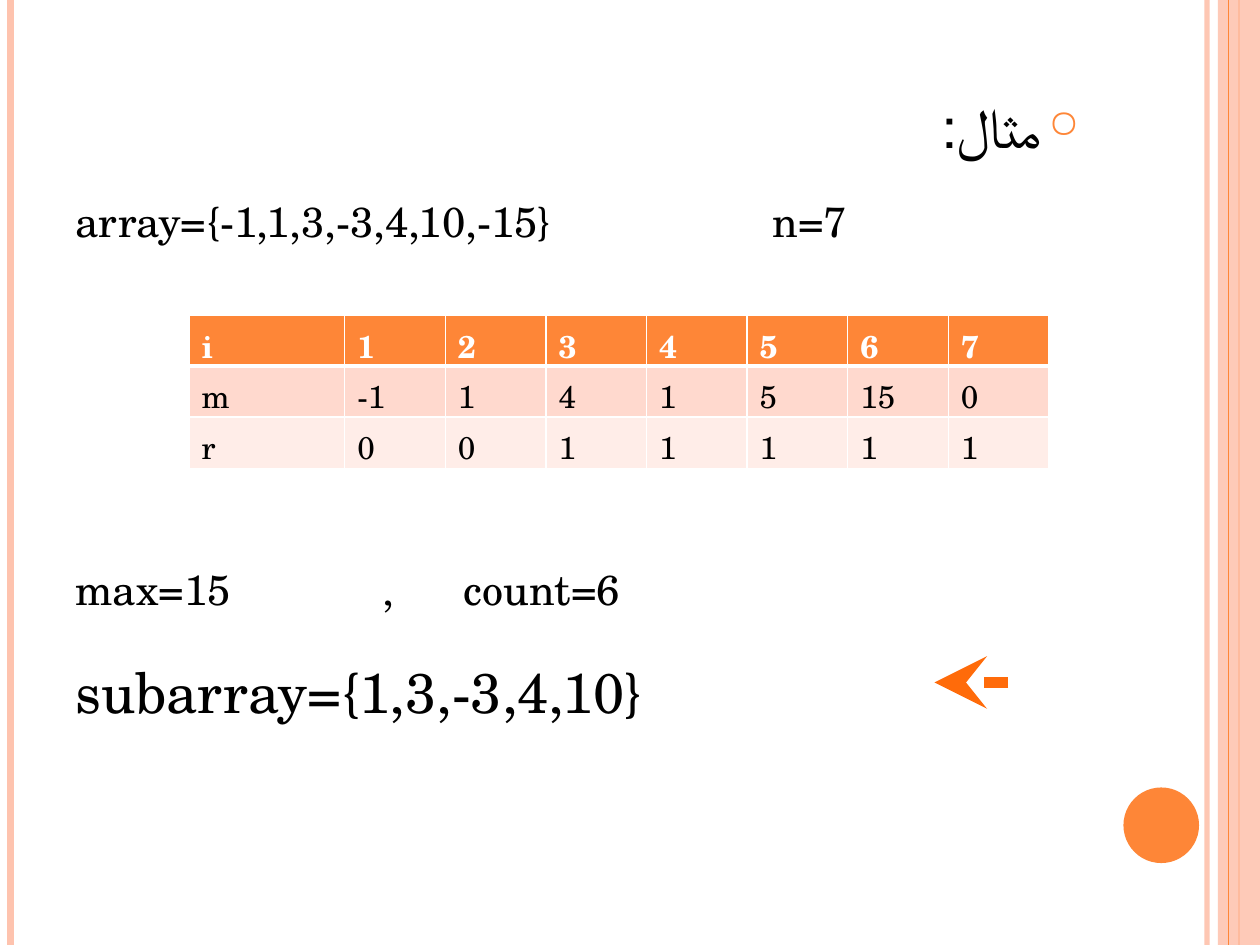
from lxml import etree
from pptx import Presentation, util as u
from pptx.dml.color import RGBColor
from pptx.enum import shapes, text
from pptx.oxml.ns import qn

ORANGE, PEACH, WHITE, BLACK = "FE8637", "FEC3AE", "FFFFFF", "000000"
ALIGN = text.PP_ALIGN


def rgb(code):
    return RGBColor.from_string(code)


def put(obj, vals):
    for key, val in vals.items():
        setattr(obj, key, val)


def node(up, tag, **vals):
    return etree.SubElement(up, qn(tag), {k: str(v) for k, v in vals.items()})


def fade(fill, part):
    """Make a solid fill partly clear; part is its opacity in percent."""
    color = fill._xPr.find(qn("a:solidFill"))[0]
    node(color, "a:alpha", val=part * 1000)


class Deck:
    font = "TeX Gyre Schola"

    def __init__(self, wide, high):
        self.prs = Presentation()
        put(self.prs, {"slide_width": u.Pt(wide), "slide_height": u.Pt(high)})
        self.slide = self.prs.slides.add_slide(self.prs.slide_layouts[6])
        self.items = self.slide.shapes

    def style(self, run, size, color=BLACK, bold=False):
        put(run.font, {"name": self.font, "size": u.Pt(size), "bold": bold})
        run.font.color.rgb = rgb(color)

    def line(self, x1, y1, x2, y2, color, width, alpha=None, head=None):
        ends = [u.Pt(v) for v in (x1, y1, x2, y2)]
        line = self.items.add_connector(shapes.MSO_CONNECTOR.STRAIGHT, *ends)
        line.line.width = u.Pt(width)
        line.line.color.rgb = rgb(color)
        if alpha:
            fade(line.line.fill, alpha)
        if head:
            node(line.line._get_or_add_ln(), "a:tailEnd", type=head, w="lg", len="lg")
        node(line._element.spPr, "a:effectLst")

    def shape(self, kind, box, color, alpha=None):
        item = self.items.add_shape(kind, *[u.Pt(v) for v in box])
        item.shadow.inherit = False
        item.fill.solid()
        item.fill.fore_color.rgb = rgb(color)
        item.line.fill.background()
        if alpha:
            fade(item.fill, alpha)

    def body(self, box, rows):
        frame = self.items.add_textbox(*[u.Pt(v) for v in box]).text_frame
        frame.word_wrap = True
        for num, (words, size, gap, tabs, bullet) in enumerate(rows):
            para = frame.add_paragraph() if num else frame.paragraphs[0]
            put(para, {"line_spacing": 1.5, "space_before": u.Pt(gap),
                       "alignment": ALIGN.RIGHT if bullet else ALIGN.LEFT})
            run = para.add_run()
            run.text = words
            self.style(run, size)
            props = para._p.get_or_add_pPr()
            if bullet:
                self.bullet(props, bullet)
            if tabs:
                stops = node(props, "a:tabLst")
                for stop in tabs:
                    node(stops, "a:tab", pos=u.Pt(stop), algn="l")

    def bullet(self, props, char):
        dent = u.Pt(21.6)
        for key, val in {"rtl": 1, "marL": dent, "indent": -dent}.items():
            props.set(key, str(val))
        node(node(props, "a:buClr"), "a:srgbClr", val=ORANGE)
        node(props, "a:buSzPct", val=70000)
        node(props, "a:buChar", char=char)

    def table(self, left, top, cols, high, rows, fills):
        grid = self.items.add_table(len(rows), len(cols), u.Pt(left), u.Pt(top),
                                    u.Pt(sum(cols)), u.Pt(high * len(rows))).table
        for col, wide in zip(grid.columns, cols):
            col.width = u.Pt(wide)
        for r, (vals, fill) in enumerate(zip(rows, fills)):
            grid.rows[r].height = u.Pt(high)
            for c, val in enumerate(vals):
                cell = grid.cell(r, c)
                run = cell.text_frame.paragraphs[0].add_run()
                run.text = val
                self.style(run, 18, BLACK if r else WHITE, r == 0)
                # Borders go before the fill; the heading rule is thick
                props = cell._tc.get_or_add_tcPr()
                for side in "LRTB":
                    thick = (r, side) in ((0, "B"), (1, "T"))
                    edge = node(props, "a:ln" + side, w=u.Pt(3 if thick else 1))
                    node(node(edge, "a:solidFill"), "a:srgbClr", val=WHITE)
                cell.fill.solid()
                cell.fill.fore_color.rgb = rgb(fill)


def main():
    deck = Deck(720, 540)

    # Side stripes and page dot
    def stripe(x, color, width, alpha=None):
        deck.line(x, 0, x, 540, color, width, alpha)

    stripe(689.75, PEACH, 3, 93)
    stripe(6, PEACH, 4.5)
    stripe(708, ORANGE, 1.5)
    deck.shape(shapes.MSO_SHAPE.RECTANGLE, (696, 0, 24, 540), PEACH, 87)
    stripe(702, ORANGE, 0.75)
    deck.shape(shapes.MSO_SHAPE.OVAL, (642, 450, 43.2, 43.2), ORANGE)

    # Example text: words, size, space before, tab stops, bullet
    deck.body((36, 30, 588, 480), [
        ("مثال:", 32, 6, (), "○"),
        ("array={-1,1,3,-3,4,10,-15}\tn=7", 24, 6, (398.5,), None),
        ("max=15\t,\tcount=6", 24, 167, (175.5, 222), None),
        ("subarray={1,3,-3,4,10}", 32, 6, (), None),
    ])

    # Steps of the algorithm
    deck.table(108, 180, [89] + [57.5] * 7, 29.2, [
        ["i", "1", "2", "3", "4", "5", "6", "7"],
        ["m", "-1", "1", "4", "1", "5", "15", "0"],
        ["r", "0", "0", "1", "1", "1", "1", "1"],
    ], [ORANGE, "FFD9CE", "FFEDE8"])

    # Arrow to the result
    deck.line(576, 390, 534, 390, "FF6B0A", 6, head="stealth")
    deck.prs.save("out.pptx")


if __name__ == "__main__":
    main()
